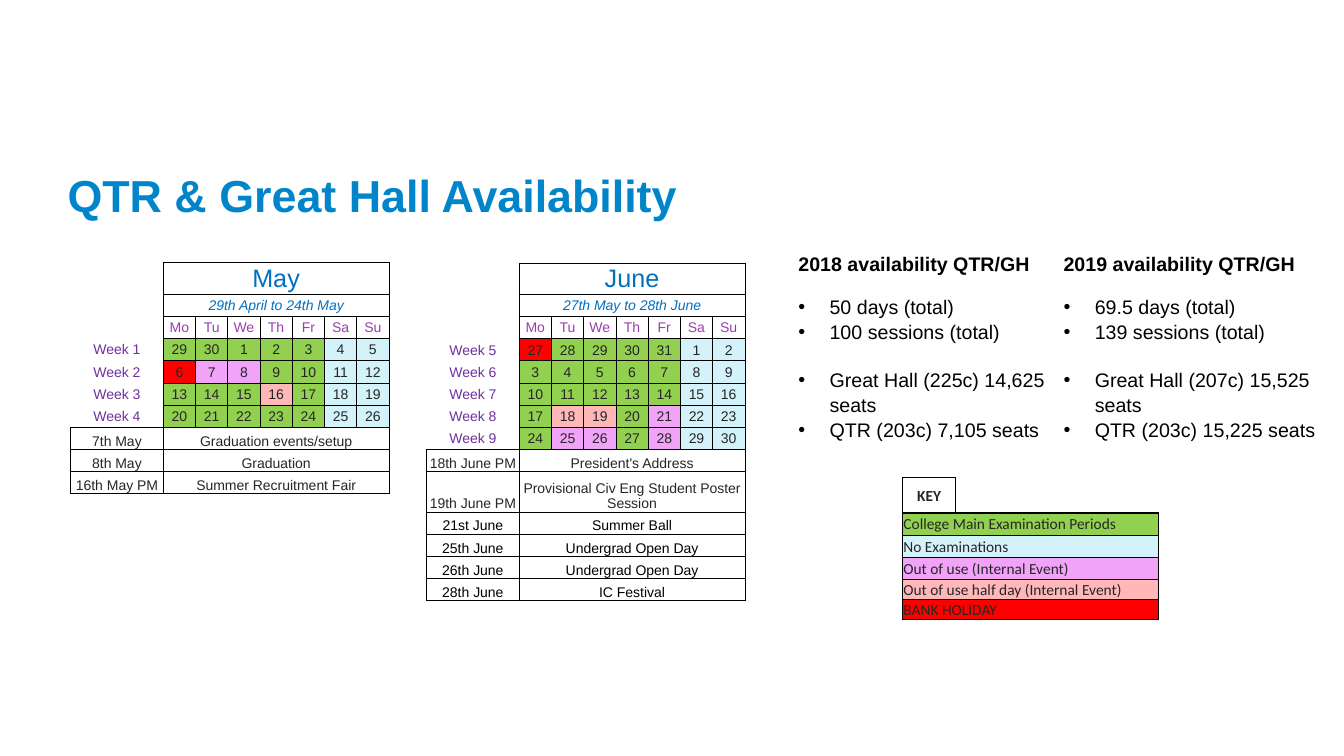
from lxml import etree
from pptx import Presentation
from pptx.dml.color import RGBColor
from pptx.enum.text import MSO_ANCHOR, MSO_AUTO_SIZE, PP_ALIGN
from pptx.oxml.ns import qn
from pptx.util import Inches, Pt

MIDDLE, BOTTOM = MSO_ANCHOR.MIDDLE, MSO_ANCHOR.BOTTOM
CENTER, LEFT = PP_ALIGN.CENTER, PP_ALIGN.LEFT
FIT_SHAPE = MSO_AUTO_SIZE.SHAPE_TO_FIT_TEXT
BLACK, DARK, BLUE = "000000", "262626", "0070C0"
PURPLE, VIOLET, TITLE_BLUE = "993EAC", "7030A0", "0085CA"
FILLS = {"exam": "92D050", "none": "D3F2FA", "event": "F1A3F7", "half": "FFB7B7", "holiday": "FF0000"}
CODES = {"X": "exam", "-": "none", "E": "event", "H": "half", "B": "holiday"}
WEEKDAYS = ["Mo", "Tu", "We", "Th", "Fr", "Sa", "Su"]
THIN = dict.fromkeys("LRTB", 0.5)


def rgb(value):
    """Turn a hex string into a colour."""
    return RGBColor.from_string(value)


def format_font(font, size, color, name="Arial", bold=False, italic=False):
    """Set the look of a font."""
    font.name, font.size, font.bold, font.italic = name, Pt(size), bold, italic
    font.color.rgb = rgb(color)


def set_borders(cell, widths):
    """Draw the given sides of a cell in black and hide the others."""
    properties = cell._tc.get_or_add_tcPr()
    for side in "LRTB":
        line = etree.SubElement(properties, qn(f"a:ln{side}"))
        if side not in widths:
            etree.SubElement(line, qn("a:noFill"))
            continue
        line.set("w", str(Pt(widths[side])))
        solid = etree.SubElement(line, qn("a:solidFill"))
        etree.SubElement(solid, qn("a:srgbClr"), val=BLACK)


def style_cell(cell, text="", color=DARK, fill=None, borders=THIN, size=10,
               align=CENTER, anchor=MIDDLE, **font_options):
    """Fill one table cell with text, borders and a background."""
    cell.margin_left = cell.margin_right = cell.margin_top = Inches(0.01)
    cell.margin_bottom = Inches(0)
    cell.vertical_anchor = anchor
    set_borders(cell, borders)
    if fill:
        cell.fill.solid()
        cell.fill.fore_color.rgb = rgb(fill)
    else:
        cell.fill.background()
    para = cell.text_frame.paragraphs[0]
    para.alignment = align
    if text:
        para.text = text
        format_font(para.runs[0].font, size, color, **font_options)
    else:
        para._p.get_or_add_endParaRPr().set("sz", str(size * 100))


def style_merged(table, row, first, text, **options):
    """Merge the rest of a row from the first column on and style it."""
    cells = list(table.rows[row].cells)[first:]
    cells[0].merge(cells[-1])
    for index, cell in enumerate(cells):
        style_cell(cell, "" if index else text, **options)


def add_grid(page, left, top, widths, heights):
    """Add a plain table with the given column widths and row heights."""
    frame = page.shapes.add_table(len(heights), len(widths), Inches(left), Inches(top),
                                  Inches(sum(widths)), Inches(sum(heights)))
    table = frame.table
    table.first_row = table.horz_banding = False
    for column, width in zip(table.columns, widths):
        column.width = Inches(width)
    for row, height in zip(table.rows, heights):
        row.height = Inches(height)
    return table


def add_calendar(page, left, top, heights, month, dates, first_week, days, weeks, events):
    """Add a month table: heading, weeks of coloured days, then events."""
    table = add_grid(page, left, top, [0.92] + [0.32] * 7, heights)
    for row in range(3):
        style_cell(table.cell(row, 0), borders={"R": 0.5})
    style_merged(table, 0, 1, month, color=BLUE, size=18)
    style_merged(table, 1, 1, dates, color=BLUE, italic=True)
    for column, weekday in enumerate(WEEKDAYS, 1):
        style_cell(table.cell(2, column), weekday, PURPLE)
    for index, codes in enumerate(weeks):
        row = 3 + index
        borders = {"R": 0.5, "B": 0.5} if index == len(weeks) - 1 else {"R": 0.5}
        style_cell(table.cell(row, 0), f"Week {first_week + index}", VIOLET, borders=borders)
        for column, code in enumerate(codes, 1):
            day = days[index * 7 + column - 1]
            style_cell(table.cell(row, column), str(day), fill=FILLS[CODES[code]])
    for row, (date, event, color) in enumerate(events, 3 + len(weeks)):
        style_cell(table.cell(row, 0), date, color, anchor=BOTTOM)
        style_merged(table, row, 1, event, color=color, anchor=BOTTOM)


def add_key(page):
    """Add the colour key."""
    table = add_grid(page, 8.95, 4.74, [0.53] + [0.67] * 3, [0.35, 0.22, 0.22, 0.22, 0.2, 0.2])
    frame = dict.fromkeys("LRTB", 1)
    style_cell(table.cell(0, 0), "KEY", borders=frame, size=11, name="Calibri", bold=True)
    for column in range(1, 4):
        style_cell(table.cell(0, column), borders={"L": 1, "B": 1} if column == 1 else {"B": 1})
    entries = [
        ("College Main Examination Periods", "exam", 1, 0.5),
        ("No Examinations", "none", 0.5, 0.5),
        ("Out of use (Internal Event)", "event", 0.5, 1),
        ("Out of use half day (Internal Event)", "half", 1, 1),
        ("BANK HOLIDAY", "holiday", 1, 1),
    ]
    for row, (text, kind, above, below) in enumerate(entries, 1):
        style_merged(table, row, 0, text, fill=FILLS[kind], size=11, align=LEFT, name="Calibri",
                     borders={**frame, "T": above, "B": below})


def add_title(page, text):
    """Add the slide heading."""
    box = page.shapes.add_textbox(Inches(0.67), Inches(1.63), Inches(12), Inches(0.56))
    frame = box.text_frame
    frame.word_wrap, frame.vertical_anchor = True, MIDDLE
    frame.margin_left = frame.margin_right = frame.margin_bottom = Inches(0)
    frame.text = text
    format_font(frame.paragraphs[0].runs[0].font, 32, TITLE_BLUE, bold=True)


def add_availability(page, left, heading, bullets):
    """Add a bold heading with two groups of two bullets."""
    box = page.shapes.add_textbox(Inches(left), Inches(2.44), Inches(2.73), Inches(2.24))
    frame = box.text_frame
    frame.word_wrap, frame.auto_size = True, FIT_SHAPE
    frame.text = "\n".join([heading] + bullets)
    gaps = {1: 13.3, 3: 16.9}
    for index, para in enumerate(frame.paragraphs):
        para.line_spacing = 1.05
        para.space_before = Pt(gaps.get(index, 0))
        format_font(para.runs[0].font, 14, BLACK, bold=index == 0)
        if index:
            properties = para._p.get_or_add_pPr()
            properties.set("marL", str(Inches(0.31)))
            properties.set("indent", str(Inches(-0.31)))
            etree.SubElement(properties, qn("a:buFont"), typeface="Arial")
            etree.SubElement(properties, qn("a:buChar"), char="•")


def main():
    """Build the availability slide."""
    deck = Presentation()
    deck.slide_width, deck.slide_height = Inches(13.33), Inches(7.5)
    page = deck.slides.add_slide(deck.slide_layouts[6])
    add_title(page, "QTR & Great Hall Availability")
    add_calendar(
        page, 0.7, 2.6, [0.32] + [0.22] * 9, "May", "29th April to 24th May", 1,
        [29, 30, *range(1, 27)], ["XXXXX--", "BEEXX--", "XXXHX--", "XXXXX--"],
        [("7th May", "Graduation events/setup", DARK),
         ("8th May", "Graduation", DARK),
         ("16th May PM", "Summer Recruitment Fair", DARK)])
    add_calendar(
        page, 4.23, 2.61, [0.3] + [0.22] * 8 + [0.4] + [0.22] * 4, "June", "27th May to 28th June", 5,
        [*range(27, 32), *range(1, 31)], ["BXXXX--", "XXXXX--", "XXXXX--", "XHHXE--", "XEEXE--"],
        [("18th June PM", "President's Address", DARK),
         ("19th June PM", "Provisional Civ Eng Student Poster Session", DARK),
         ("21st June", "Summer Ball", BLACK),
         ("25th June", "Undergrad Open Day", BLACK),
         ("26th June", "Undergrad Open Day", BLACK),
         ("28th June", "IC Festival", BLACK)])
    add_availability(page, 10.45, "2019 availability QTR/GH", [
        "69.5 days (total)", "139 sessions (total)",
        "Great Hall (207c) 15,525 seats", "QTR (203c) 15,225 seats"])
    add_key(page)
    add_availability(page, 7.82, "2018 availability QTR/GH", [
        "50 days (total)", "100 sessions (total)",
        "Great Hall (225c) 14,625 seats", "QTR (203c) 7,105 seats"])
    deck.save("out.pptx")


if __name__ == "__main__":
    main()
